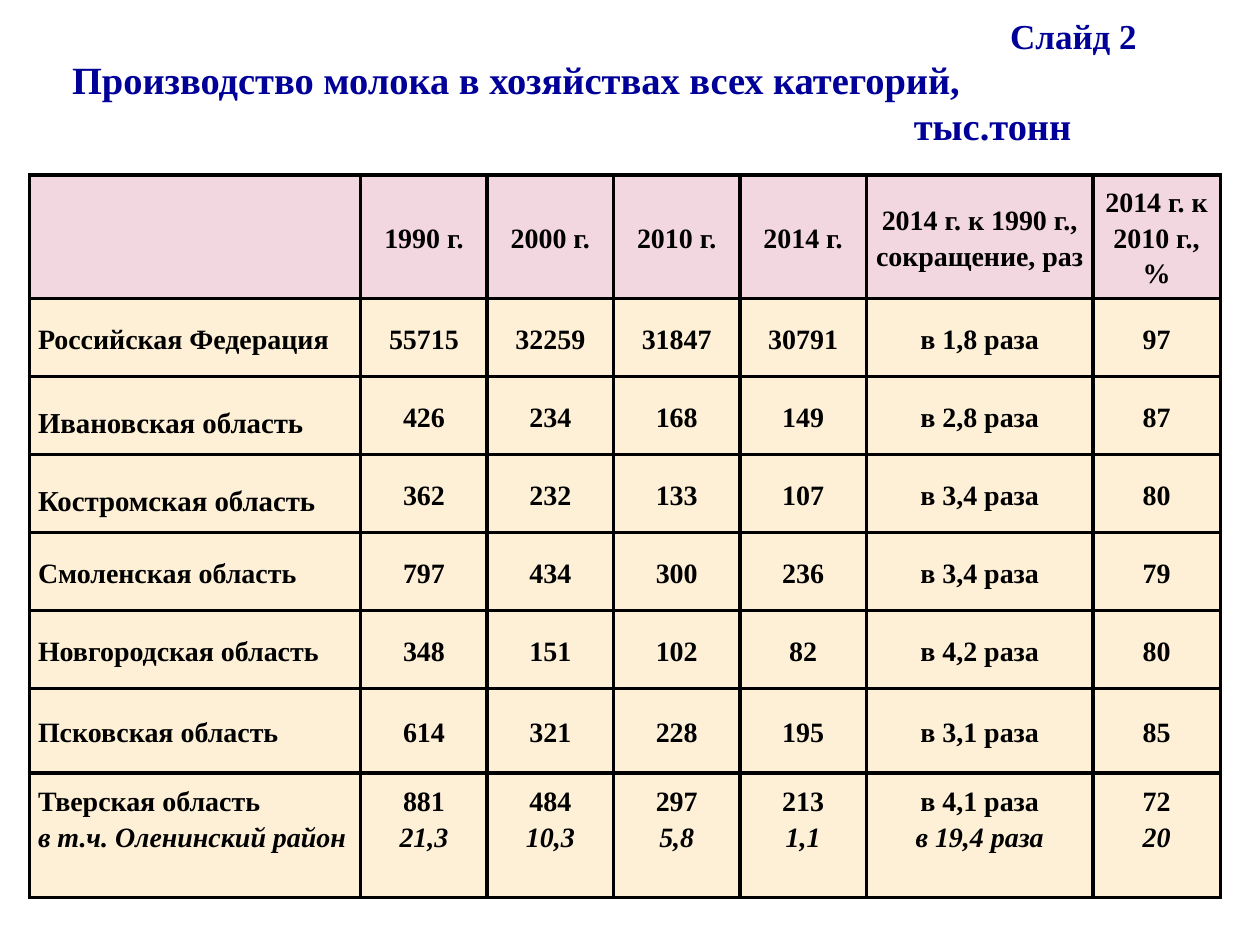
from dataclasses import dataclass

from lxml import etree
from pptx import Presentation
from pptx.dml.color import RGBColor
from pptx.enum.text import MSO_ANCHOR, MSO_AUTO_SIZE, PP_ALIGN
from pptx.oxml.ns import qn
from pptx.slide import Slide
from pptx.util import Pt

LEFT, CENTER = PP_ALIGN.LEFT, PP_ALIGN.CENTER
MIDDLE = MSO_ANCHOR.MIDDLE
NO_FIT = MSO_AUTO_SIZE.NONE

TITLE_LINES = [
    ("Слайд 2", 20, 536),
    ("Производство молока в хозяйствах всех категорий,", 22, 0),
    ("тыс.тонн", 22, 481),
]
COLUMN_WIDTHS = [189.4, 72.25, 72.25, 72.25, 72.25, 129.5, 72.75]
ROW_HEIGHTS = [70.5] + [44.6] * 5 + [48.2, 71.3]
ROWS = [
    ["", "1990 г.", "2000 г.", "2010 г.", "2014 г.",
     "2014 г. к 1990 г., сокращение, раз", "2014 г. к\n2010 г., %"],
    ["Российская Федерация", "55715", "32259", "31847", "30791", "в 1,8 раза", "97"],
    ["Ивановская область", "426", "234", "168", "149", "в 2,8 раза", "87"],
    ["Костромская область", "362", "232", "133", "107", "в 3,4 раза", "80"],
    ["Смоленская область", "797", "434", "300", "236", "в 3,4 раза", "79"],
    ["Новгородская область", "348", "151", "102", "82", "в 4,2 раза", "80"],
    ["Псковская область", "614", "321", "228", "195", "в 3,1 раза", "85"],
    ["Тверская область\nв т.ч. Оленинский район", "881\n21,3", "484\n10,3",
     "297\n5,8", "213\n1,1", "в 4,1 раза\nв 19,4 раза", "72\n20"],
]
LOOSE_ROWS = (2, 3)
LAST_ROW = len(ROWS) - 1


def color(value):
    return RGBColor.from_string(value)


@dataclass
class MilkPage:
    page: Slide
    font_name: str = "Times New Roman"
    title_color: str = "000099"
    text_color: str = "000000"
    border_color: str = "000000"
    border_width: float = 2.25
    header_fill: str = "F2D7E0"
    body_fill: str = "FEF0D7"

    def format_text(self, paragraph, size, hue, italic=False):
        for span in paragraph.runs:
            span.font.name = self.font_name
            span.font.size = Pt(size)
            span.font.bold = True
            span.font.italic = italic
            span.font.color.rgb = color(hue)

    def add_title(self, lines, left, top, width, height):
        box = self.page.shapes.title
        box.left, box.top, box.width, box.height = map(Pt, (left, top, width, height))
        frame = box.text_frame
        frame.text = "\n".join(text for text, _, _ in lines)
        frame.word_wrap = True
        frame.auto_size = NO_FIT
        frame.vertical_anchor = MIDDLE
        for paragraph, (_, size, indent) in zip(frame.paragraphs, lines):
            paragraph.alignment = LEFT
            properties = paragraph._p.get_or_add_pPr()
            properties.set("marL", str(Pt(indent)))
            properties.set("indent", "0")
            self.format_text(paragraph, size, self.title_color)

    def add_borders(self, cell):
        properties = cell._tc.get_or_add_tcPr()
        for position, side in enumerate(("lnL", "lnR", "lnT", "lnB")):
            line = etree.Element(qn(f"a:{side}"), w=str(Pt(self.border_width)))
            fill = etree.SubElement(line, qn("a:solidFill"))
            etree.SubElement(fill, qn("a:srgbClr"), val=self.border_color)
            properties.insert(position, line)

    def fill_cell(self, cell, text, row, column):
        cell.text_frame.text = text
        cell.vertical_anchor = MIDDLE
        cell.margin_left = cell.margin_right = Pt(5)
        cell.margin_top = 0
        cell.margin_bottom = Pt(20 if row == LAST_ROW else 0)
        cell.fill.solid()
        cell.fill.fore_color.rgb = color(self.body_fill if row else self.header_fill)
        self.add_borders(cell)
        loose = column == 0 and row in LOOSE_ROWS
        spacing = 1.5 if loose else 1.15 if row else 1.14
        for index, paragraph in enumerate(cell.text_frame.paragraphs):
            paragraph.alignment = CENTER if column else LEFT
            paragraph.line_spacing = spacing
            italic = row == LAST_ROW and index > 0
            self.format_text(paragraph, 16.5 if loose else 16, self.text_color, italic)

    def add_table(self, rows, left, top, widths, heights):
        table = self.page.shapes.add_table(
            len(rows), len(widths), Pt(left), Pt(top), Pt(sum(widths)), Pt(sum(heights))
        ).table
        table.horz_banding = False
        for column, width in zip(table.columns, widths):
            column.width = Pt(width)
        for line, height in zip(table.rows, heights):
            line.height = Pt(height)
        for row, texts in enumerate(rows):
            for column, text in enumerate(texts):
                self.fill_cell(table.cell(row, column), text, row, column)


def main():
    deck = Presentation()
    deck.slide_width, deck.slide_height = Pt(720), Pt(540)
    milk = MilkPage(deck.slides.add_slide(deck.slide_layouts[5]))
    milk.add_title(TITLE_LINES, 34, 15, 632, 63)
    milk.add_table(ROWS, 16.75, 100, COLUMN_WIDTHS, ROW_HEIGHTS)
    deck.save("out.pptx")


if __name__ == "__main__":
    main()
